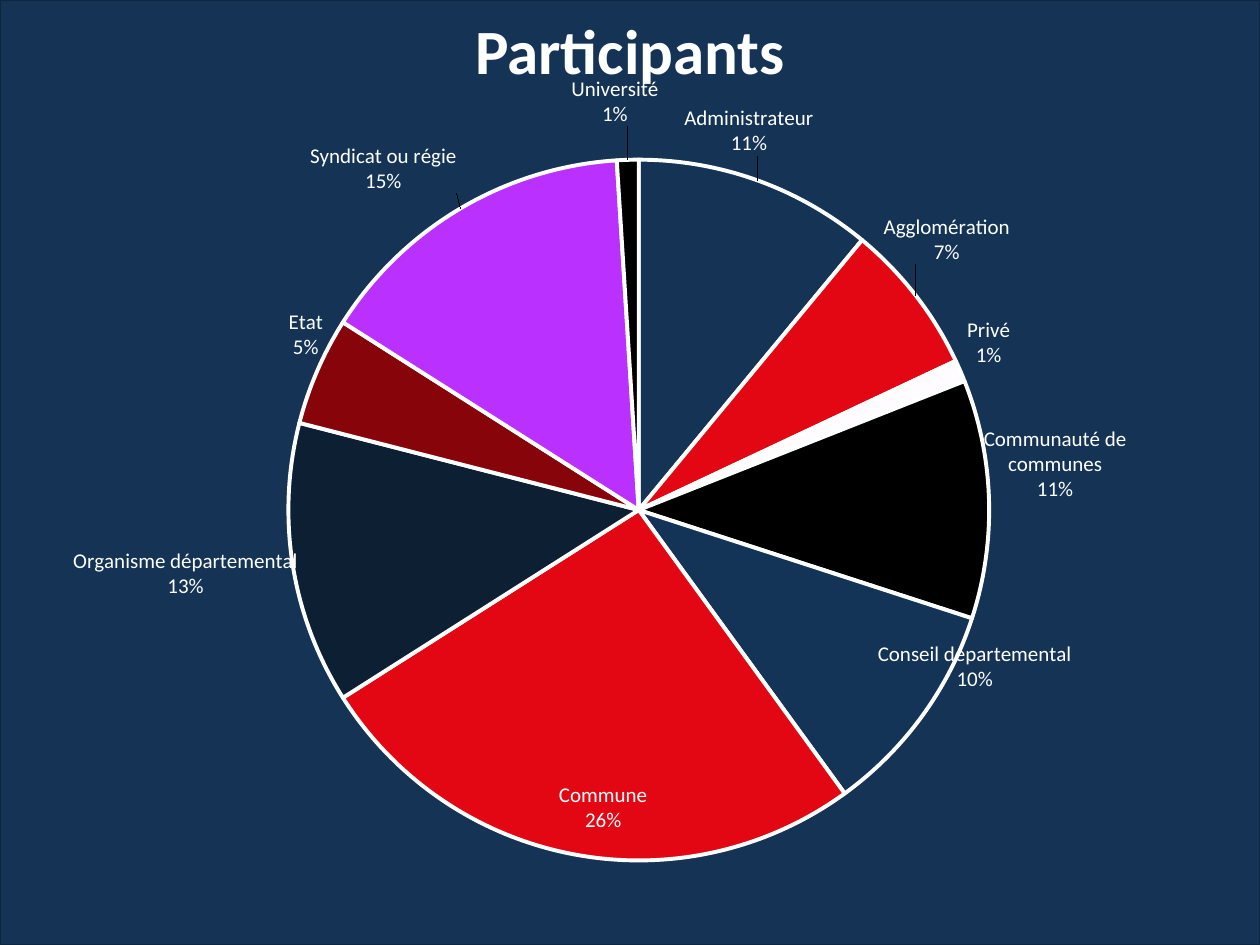
from lxml import etree
from pptx import Presentation
from pptx.chart.data import CategoryChartData
from pptx.dml.color import RGBColor
from pptx.enum.chart import XL_CHART_TYPE, XL_LABEL_POSITION
from pptx.enum.shapes import MSO_SHAPE
from pptx.enum.text import MSO_ANCHOR, PP_ALIGN
from pptx.oxml.ns import qn
from pptx.util import Cm, Pt

PIE = XL_CHART_TYPE.PIE
OUTSIDE_END = XL_LABEL_POSITION.OUTSIDE_END
RECTANGLE = MSO_SHAPE.RECTANGLE
MIDDLE = MSO_ANCHOR.MIDDLE
CENTER = PP_ALIGN.CENTER

FONT = "Calibri"
COLORS = {
    "white": "FEFFFF", "navy": "143355", "border": "0F263F", "blue": "133456",
    "red": "E30713", "pale": "FEFCFF", "black": "000000", "midnight": "0C1F33",
    "burgundy": "88040B", "purple": "BA31FF",
}
TITLE = "Participants"
# category, percentage, colour, label shift as a share of the chart size
SLICES = [
    ("Administrateur", 11, "navy", (-0.06, -0.02)),
    ("Agglomération", 7, "red", (-0.03, -0.03)),
    ("Privé", 1, "pale", None),
    ("Communauté de communes", 11, "black", (-0.01, -0.04)),
    ("Conseil départemental", 10, "blue", (-0.04, -0.09)),
    ("Commune", 26, "red", (0.06, -0.09)),
    ("Organisme départemental", 13, "midnight", (0.01, -0.02)),
    ("Etat", 5, "burgundy", (0.01, -0.01)),
    ("Syndicat ou régie", 15, "purple", (0, -0.01)),
    ("Université", 1, "black", (-0.01, -0.03)),
]
PLOT_AREA = {"layoutTarget": "inner", "xMode": "edge", "yMode": "edge",
             "x": 0.095, "y": 0.098, "w": 0.824, "h": 0.805}
SLIDE_WIDTH, SLIDE_HEIGHT = Cm(25.4), Cm(19.05)
CHART_TOP = Cm(1.5)


def color(name):
    return RGBColor.from_string(COLORS[name])


def format_font(font, size, color_name, bold=False):
    font.name, font.size, font.bold = FONT, Pt(size), bold
    font.color.rgb = color(color_name)


def make_layout(settings):
    layout = etree.Element(qn("c:layout"))
    manual = etree.SubElement(layout, qn("c:manualLayout"))
    for tag, value in settings.items():
        etree.SubElement(manual, qn(f"c:{tag}")).set("val", str(value))
    return layout


def show_category_and_percent(labels):
    """Show both parts, one above the other, in a label or a label group."""
    for tag, shown in (("showVal", 0), ("showCatName", 1), ("showPercent", 1)):
        labels.find(qn(f"c:{tag}")).set("val", str(shown))
    separator = etree.Element(qn("c:separator"))
    separator.text = "\n"
    previous = labels.find(qn("c:showBubbleSize"))
    if previous is None:
        previous = labels.find(qn("c:showPercent"))
    previous.addnext(separator)


def add_background(slide):
    shape = slide.shapes.add_shape(RECTANGLE, 0, 0, SLIDE_WIDTH, SLIDE_HEIGHT)
    shape.shadow.inherit = False
    shape.fill.solid()
    shape.fill.fore_color.rgb = color("navy")
    shape.line.color.rgb = color("border")
    shape.line.width = Pt(1)


def add_text(slide, text, left, top, width, height, **font_format):
    frame = slide.shapes.add_textbox(left, top, width, height).text_frame
    frame.word_wrap = True
    frame.vertical_anchor = MIDDLE
    paragraph = frame.paragraphs[0]
    paragraph.alignment = CENTER
    run = paragraph.add_run()
    run.text = text
    format_font(run.font, **font_format)


def add_pie(slide):
    data = CategoryChartData()
    data.categories = [name for name, *_ in SLICES]
    data.add_series("Participants", [value for _, value, *_ in SLICES])
    chart = slide.shapes.add_chart(PIE, 0, CHART_TOP, SLIDE_WIDTH,
                                   SLIDE_HEIGHT - CHART_TOP, data).chart
    chart.has_title = chart.has_legend = False
    format_font(chart.font, 10, "blue")
    chart.plots[0].vary_by_categories = True
    plot_area = chart.element.find(".//" + qn("c:plotArea"))
    for layout in plot_area.findall(qn("c:layout")):
        plot_area.remove(layout)
    plot_area.insert(0, make_layout(PLOT_AREA))

    series = chart.plots[0].series[0]
    labels = series.data_labels
    labels.position = OUTSIDE_END
    format_font(labels.font, 12, "white")
    for index, (_, _, color_name, shift) in enumerate(SLICES):
        point = series.points[index]
        point.format.fill.solid()
        point.format.fill.fore_color.rgb = color(color_name)
        point.format.line.color.rgb = color("white")
        point.format.line.width = Pt(2.25)
        if shift:
            point.data_label.position = OUTSIDE_END
            format_font(point.data_label.font, 12, "white")

    label_group = chart.element.find(".//" + qn("c:dLbls"))
    show_category_and_percent(label_group)
    for label in label_group.findall(qn("c:dLbl")):
        show_category_and_percent(label)
        index = label.find(qn("c:idx"))
        x, y = SLICES[int(index.get("val"))][3]
        index.addnext(make_layout({"x": x, "y": y}))


def main():
    presentation = Presentation()
    presentation.slide_width = SLIDE_WIDTH
    presentation.slide_height = SLIDE_HEIGHT
    slide = presentation.slides.add_slide(presentation.slide_layouts[6])
    add_background(slide)
    add_text(slide, TITLE, 0, 0, SLIDE_WIDTH, Cm(2),
             size=36, color_name="white", bold=True)
    add_pie(slide)
    presentation.save("out.pptx")


if __name__ == "__main__":
    main()
